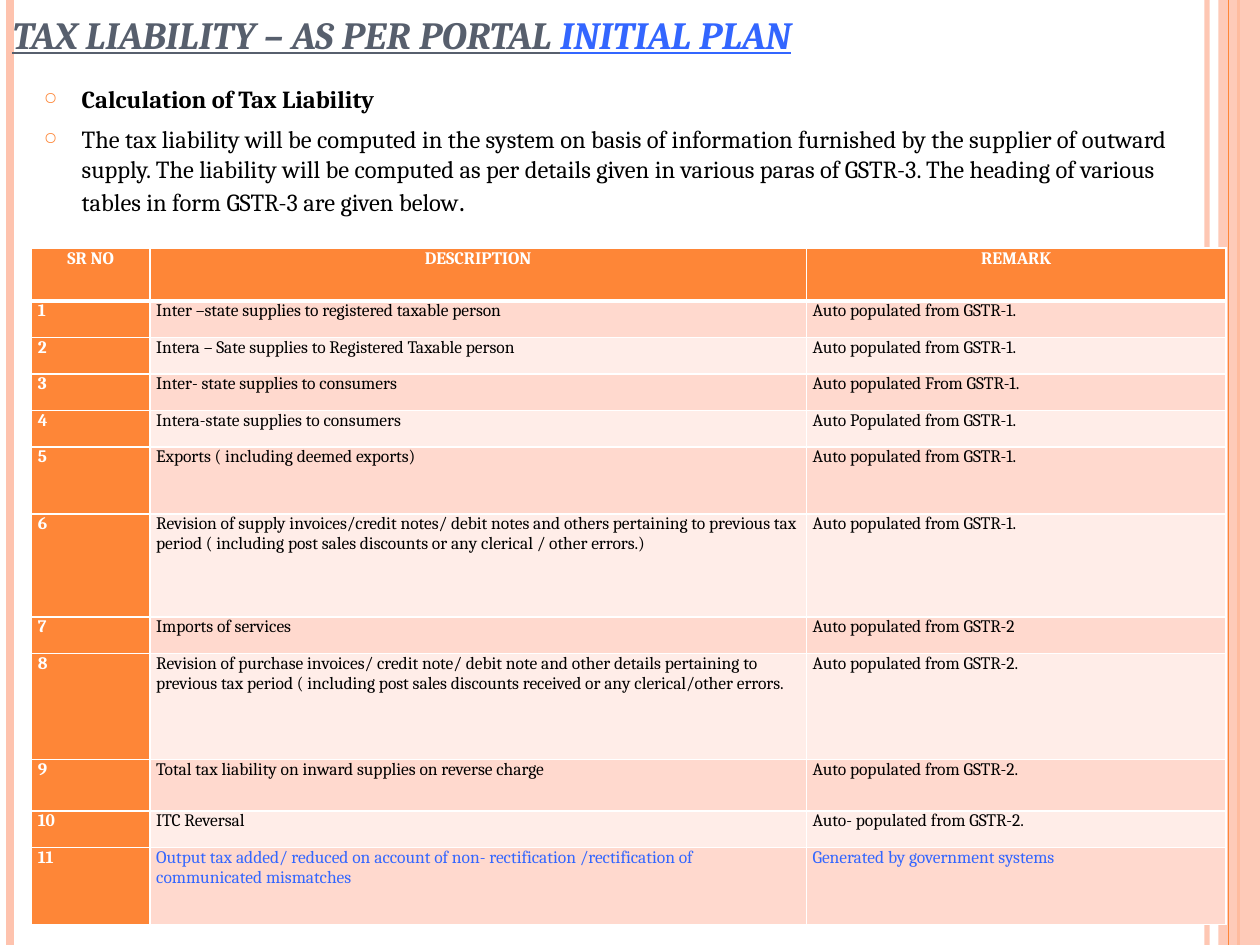
from lxml import etree
from pptx import Presentation
from pptx.dml.color import RGBColor
from pptx.enum.shapes import MSO_CONNECTOR, MSO_SHAPE
from pptx.enum.text import MSO_ANCHOR, PP_ALIGN
from pptx.oxml.ns import qn
from pptx.util import Inches, Pt

COLORS = {
    "orange": "FE8637", "peach": "FEC3AE", "band_dark": "FFD9CE",
    "band_light": "FFEDE8", "white": "FFFFFF", "black": "000000",
    "slate": "575F6D", "blue": "3366FF",
}


def add_run(paragraph, text, size, color="black", bold=False, italic=False, underline=False):
    run = paragraph.add_run()
    run.text = text
    font = run.font
    font.name, font.size = "Cambria", Pt(size)
    font.bold, font.italic, font.underline = bold, italic, underline
    font.color.rgb = RGBColor.from_string(COLORS[color])


def add_color(parent, color, alpha=None):
    """Append a colour element, with its opacity in percent, to an XML parent."""
    element = etree.SubElement(parent, qn("a:srgbClr"), val=COLORS[color])
    if alpha is not None:
        etree.SubElement(element, qn("a:alpha"), val=str(alpha * 1000))


prs = Presentation()
prs.slide_width, prs.slide_height = Inches(10), Inches(7.5)
slide = prs.slides.add_slide(prs.slide_layouts[6])

# Vertical stripes at the slide's edges, from back to front
side_band = None
for x, color, width, alpha in [
    (9.58, "peach", 3, 93),
    (0.08, "peach", 4.5, None),
    (9.83, "orange", 1.5, None),
    (9.75, "orange", 0.75, None),
]:
    if x == 9.75:
        side_band = slide.shapes.add_shape(
            MSO_SHAPE.RECTANGLE, Inches(9.67), 0, Inches(0.33), prs.slide_height)
        side_band.shadow.inherit = False
        side_band.line.fill.background()
        side_band.fill.solid()
        side_band.fill.fore_color.rgb = RGBColor.from_string(COLORS["peach"])
        band_color = side_band.fill._xPr.find(qn("a:solidFill"))
        band_color.remove(band_color[0])
        add_color(band_color, "peach", 87)
    stripe = slide.shapes.add_connector(
        MSO_CONNECTOR.STRAIGHT, Inches(x), 0, Inches(x), prs.slide_height)
    stripe.line.width = Pt(width)
    stripe.line.fill.solid()
    stripe.line.color.rgb = RGBColor.from_string(COLORS[color])
    properties = stripe._element.spPr
    if alpha:
        stripe_color = properties.find(qn("a:ln")).find(qn("a:solidFill"))
        stripe_color.remove(stripe_color[0])
        add_color(stripe_color, color, alpha)
    etree.SubElement(properties, qn("a:effectLst"))

# Title
title = slide.shapes.add_textbox(0, 0, Inches(9.58), Inches(0.5)).text_frame
title.word_wrap = True
title.vertical_anchor = MSO_ANCHOR.BOTTOM
for text, color in [("TAX LIABILITY – AS PER PORTAL ", "slate"), ("INITIAL PLAN", "blue")]:
    add_run(title.paragraphs[0], text, 22, color, bold=True, italic=True, underline=True)

# Introduction
intro = slide.shapes.add_textbox(
    Inches(0.25), Inches(0.62), Inches(9.5), Inches(6.88)).text_frame
intro.word_wrap = True
heading, explanation = intro.paragraphs[0], intro.add_paragraph()
add_run(heading, "Calculation of Tax Liability", 14, bold=True)
add_run(explanation,
        "The tax liability will be computed in the system on basis of information "
        "furnished by the supplier of outward supply. The liability will be computed "
        "as per details given in various paras of GSTR-3. The heading of various "
        "tables in form GSTR-3 are given below", 14)
add_run(explanation, ".", 16)
for paragraph in (heading, explanation):
    paragraph.space_before = Pt(6)
    bullet = paragraph._p.get_or_add_pPr()
    bullet.set("marL", str(Inches(0.3)))
    bullet.set("indent", str(-Inches(0.3)))
    add_color(etree.SubElement(bullet, qn("a:buClr")), "orange")
    etree.SubElement(bullet, qn("a:buSzPct"), val="70000")
    etree.SubElement(bullet, qn("a:buChar"), char="○")

# Table of GSTR-3 headings: row height, description, remark
HEADINGS = [
    (0.29, "Inter –state supplies to registered taxable person", "Auto populated from GSTR-1."),
    (0.29, "Intera – Sate supplies to Registered Taxable person", "Auto populated from GSTR-1."),
    (0.29, "Inter- state supplies to consumers", "Auto populated From GSTR-1."),
    (0.29, "Intera-state supplies to consumers", "Auto Populated from GSTR-1."),
    (0.53, "Exports ( including deemed exports)", "Auto populated from GSTR-1."),
    (0.82, "Revision of supply invoices/credit notes/ debit notes and others pertaining to "
           "previous tax period ( including post sales discounts or any clerical / other "
           "errors.)", "Auto populated from GSTR-1."),
    (0.29, "Imports of services", "Auto populated from GSTR-2"),
    (0.84, "Revision of purchase invoices/ credit note/ debit note and other details "
           "pertaining to previous tax period ( including post sales discounts received or "
           "any clerical/other errors.", "Auto populated from GSTR-2."),
    (0.41, "Total tax liability on inward supplies on reverse charge",
     "Auto populated from GSTR-2."),
    (0.29, "ITC Reversal", "Auto- populated from GSTR-2."),
    (0.61, "Output tax added/ reduced on account of non- rectification /rectification of "
           "communicated mismatches", "Generated by government systems"),
]
rows = [(0.42, "SR NO", "DESCRIPTION", "REMARK")]
rows += [(height, str(number), description, remark)
         for number, (height, description, remark) in enumerate(HEADINGS, 1)]

table = slide.shapes.add_table(
    len(rows), 3, Inches(0.25), Inches(1.97), Inches(9.48), Inches(5.39)).table
for column, width in zip(table.columns, (0.94, 5.21, 3.33)):
    column.width = Inches(width)

for r, (height, *texts) in enumerate(rows):
    table.rows[r].height = Inches(height)
    for c, text in enumerate(texts):
        cell = table.cell(r, c)
        cell.margin_left = cell.margin_right = Inches(0.05)
        cell.margin_top = cell.margin_bottom = 0
        is_label = r == 0 or c == 0
        if is_label:
            fill, color = "orange", "white"
        else:
            fill = "band_dark" if r % 2 else "band_light"
            color = "blue" if r == len(HEADINGS) else "black"
        for side in ("lnL", "lnR", "lnT", "lnB"):
            thick = (r, side) in ((0, "lnB"), (1, "lnT"))
            border = etree.SubElement(cell._tc.get_or_add_tcPr(), qn("a:" + side),
                                      w=str(Pt(3 if thick else 1)))
            add_color(etree.SubElement(border, qn("a:solidFill")), "white")
        cell.fill.solid()
        cell.fill.fore_color.rgb = RGBColor.from_string(COLORS[fill])
        paragraph = cell.text_frame.paragraphs[0]
        paragraph.alignment = PP_ALIGN.CENTER if r == 0 else PP_ALIGN.LEFT
        add_run(paragraph, text, 10, color, bold=is_label)

prs.save("out.pptx")
